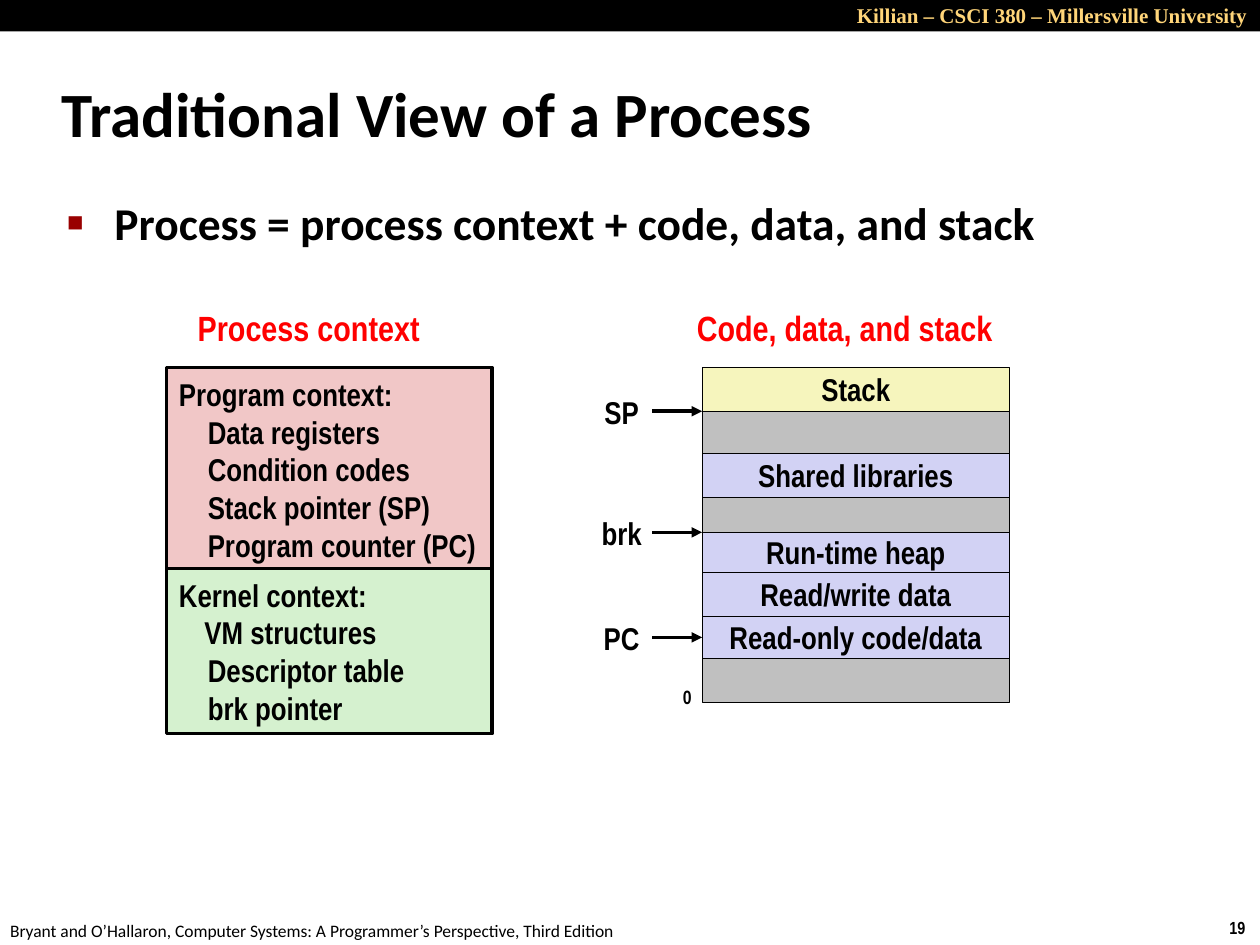
from lxml import etree
from pptx import Presentation
from pptx.dml.color import RGBColor
from pptx.enum.shapes import MSO_CONNECTOR, MSO_SHAPE
from pptx.enum.text import MSO_ANCHOR, MSO_AUTO_SIZE, PP_ALIGN
from pptx.oxml.ns import qn
from pptx.util import Pt

LEFT, CENTER, RIGHT = PP_ALIGN.LEFT, PP_ALIGN.CENTER, PP_ALIGN.RIGHT
TOP, MIDDLE = MSO_ANCHOR.TOP, MSO_ANCHOR.MIDDLE
NO_FIT = MSO_AUTO_SIZE.NONE
RECT, STRAIGHT = MSO_SHAPE.RECTANGLE, MSO_CONNECTOR.STRAIGHT
NARROW, SANS, SERIF = "Arial Narrow", "Calibri", "Times New Roman"
BLACK, RED, GOLD = "000000", "FF0000", "FFD579"
PINK, GREEN, BLUE, GRAY, YELLOW = "F1C7C7", "D5F1CF", "D2D2F4", "C0C0C0", "F6F5BD"
PAD = 16.5


def rgb(code):
    return RGBColor.from_string(code)


def style(para, size, font=NARROW, color=BLACK, bold=True, align=LEFT):
    para.alignment = align
    para.font.size = Pt(size)
    para.font.name = font
    para.font.bold = bold
    para.font.color.rgb = rgb(color)


def add_text(slide, box, text, size, anchor=TOP, wrap=False, **look):
    shape = slide.shapes.add_textbox(*map(Pt, box))
    frame = shape.text_frame
    frame.word_wrap = wrap
    frame.vertical_anchor = anchor
    para = frame.paragraphs[0]
    para.text = text
    style(para, size, **look)
    return para


def add_rect(slide, box, fill, width=None):
    """Plain rectangle; no outline unless a line width is given."""
    shape = slide.shapes.add_shape(RECT, *map(Pt, box))
    shape.shadow.inherit = False
    shape.fill.solid()
    shape.fill.fore_color.rgb = rgb(fill)
    if width:
        shape.line.color.rgb = rgb(BLACK)
        shape.line.width = Pt(width)
    else:
        shape.line.fill.background()
    return shape


def add_arrow(slide, start, end, y):
    line = slide.shapes.add_connector(STRAIGHT, Pt(start), Pt(y), Pt(end), Pt(y))
    line.line.color.rgb = rgb(BLACK)
    line.line.width = Pt(2)
    ln = line.line._get_or_add_ln()
    etree.SubElement(ln, qn("a:tailEnd"), type="triangle")
    etree.SubElement(ln.getparent(), qn("a:effectLst"))
    return line


def add_banner(slide, box):
    left, top, width, height = box
    add_rect(slide, box, BLACK)
    add_text(slide, (left + 324, top - 2, width - 324, height + 3.5),
             "Killian – CSCI 380 – Millersville University", 12,
             wrap=True, font=SERIF, color=GOLD, align=RIGHT)


def add_footer(slide, box):
    left, top, width, height = box
    add_text(slide, (left - 1.3, top + 1.5, 366, height),
             "Bryant and O’Hallaron, Computer Systems: A Programmer’s Perspective, "
             "Third Edition", 10, font=SANS, bold=False)
    add_text(slide, (left + width - 24.5, top, 24.5, height), "19", 10)


def set_title(slide, box, text):
    title = slide.shapes.title
    title.left, title.top, title.width, title.height = map(Pt, box)
    frame = title.text_frame
    frame.text = text
    frame.auto_size = NO_FIT
    frame.vertical_anchor = MIDDLE
    style(frame.paragraphs[0], 36, font=SANS)


def add_bullet(slide, box, text):
    para = add_text(slide, box, text, 26, wrap=True, font=SANS)
    props = para._p.get_or_add_pPr()
    props.set("marL", str(Pt(27)))
    props.set("indent", str(-Pt(27)))
    marks = []
    for tag, attrs in (("buClr", {}), ("buSzPct", {"val": "60000"}),
                       ("buFont", {"typeface": "Arial"}), ("buChar", {"char": "■"})):
        marks.append(etree.Element(qn("a:" + tag), attrs))
    etree.SubElement(marks[0], qn("a:srgbClr"), val="990000")
    for spot, mark in enumerate(marks):
        props.insert(spot, mark)


def add_panel(slide, box, fill, head, items):
    """Context box: a heading above (text, indent) items."""
    frame = add_rect(slide, box, fill, 2).text_frame
    frame.word_wrap = True
    frame.margin_right = 0
    frame.vertical_anchor = MIDDLE
    for spot, (text, indent) in enumerate([(head, 0), *items]):
        para = frame.add_paragraph() if spot else frame.paragraphs[0]
        para.text = text
        style(para, 18)
        para._p.get_or_add_pPr().set("marL", str(Pt(indent)))


def add_context(slide, box):
    left, top, width, height = box
    add_text(slide, (left + 10, top, 142.5, 32), "Process context", 20,
             anchor=MIDDLE, color=RED, align=CENTER)
    add_panel(slide, (left, top + 38.7, width, 116.5), PINK, "Program context:",
              [(item, PAD) for item in ("Data registers", "Condition codes",
                                        "Stack pointer (SP)", "Program counter (PC)")])
    add_panel(slide, (left, top + 153.7, width, height - 153.7), GREEN, "Kernel context:",
              [("VM structures", 14.6), ("Descriptor table", PAD), ("brk pointer", PAD)])


def add_memory(slide, box):
    left, top, width, _ = box
    add_text(slide, (left - 11, top, 185, 32), "Code, data, and stack", 20,
             anchor=MIDDLE, color=RED, align=CENTER)
    rows = [("Stack", YELLOW, 25.2), ("", GRAY, 24), ("Shared libraries", BLUE, 25.2),
            ("", GRAY, 20), ("Run-time heap", BLUE, 22.8), ("Read/write data", BLUE, 25.2),
            ("Read-only code/data", BLUE, 24), ("", GRAY, 25)]
    edge, tops, cells = top + 38.5, [], []
    for text, fill, height in rows:
        cell = add_rect(slide, (left, edge, width, height), fill, 0.25)
        if text:
            frame = cell.text_frame
            frame.word_wrap = False
            frame.vertical_anchor = MIDDLE
            frame.text = text
            style(frame.paragraphs[0], 18, align=CENTER)
        tops.append(edge)
        cells.append(cell)
        edge += height
    add_text(slide, (left - 18, edge - 13, 19.5, 21), "0", 11)
    for text, y in (("SP", tops[1]), ("brk", tops[4]), ("PC", tops[6] + 12)):
        add_text(slide, (left - 69, y - 14, 46, 29), text, 18,
                 anchor=MIDDLE, align=CENTER)
        line = add_arrow(slide, left - 28.5, left, y)
        if text == "PC":
            line.end_connect(cells[6], 1)


def main():
    deck = Presentation()
    deck.slide_width, deck.slide_height = Pt(720), Pt(540)
    slide = deck.slides.add_slide(deck.slide_layouts[5])
    add_footer(slide, (0, 520.5, 720, 19.5))
    add_banner(slide, (0, 0, 720, 18))
    set_title(slide, (28, 34.2, 597.5, 60), "Traditional View of a Process")
    add_bullet(slide, (31.3, 108, 622, 45), "Process = process context + code, data, and stack")
    add_context(slide, (95.2, 171.3, 186, 248))
    add_memory(slide, (401.2, 171.3, 175.7, 230))
    deck.save("out.pptx")


if __name__ == "__main__":
    main()
